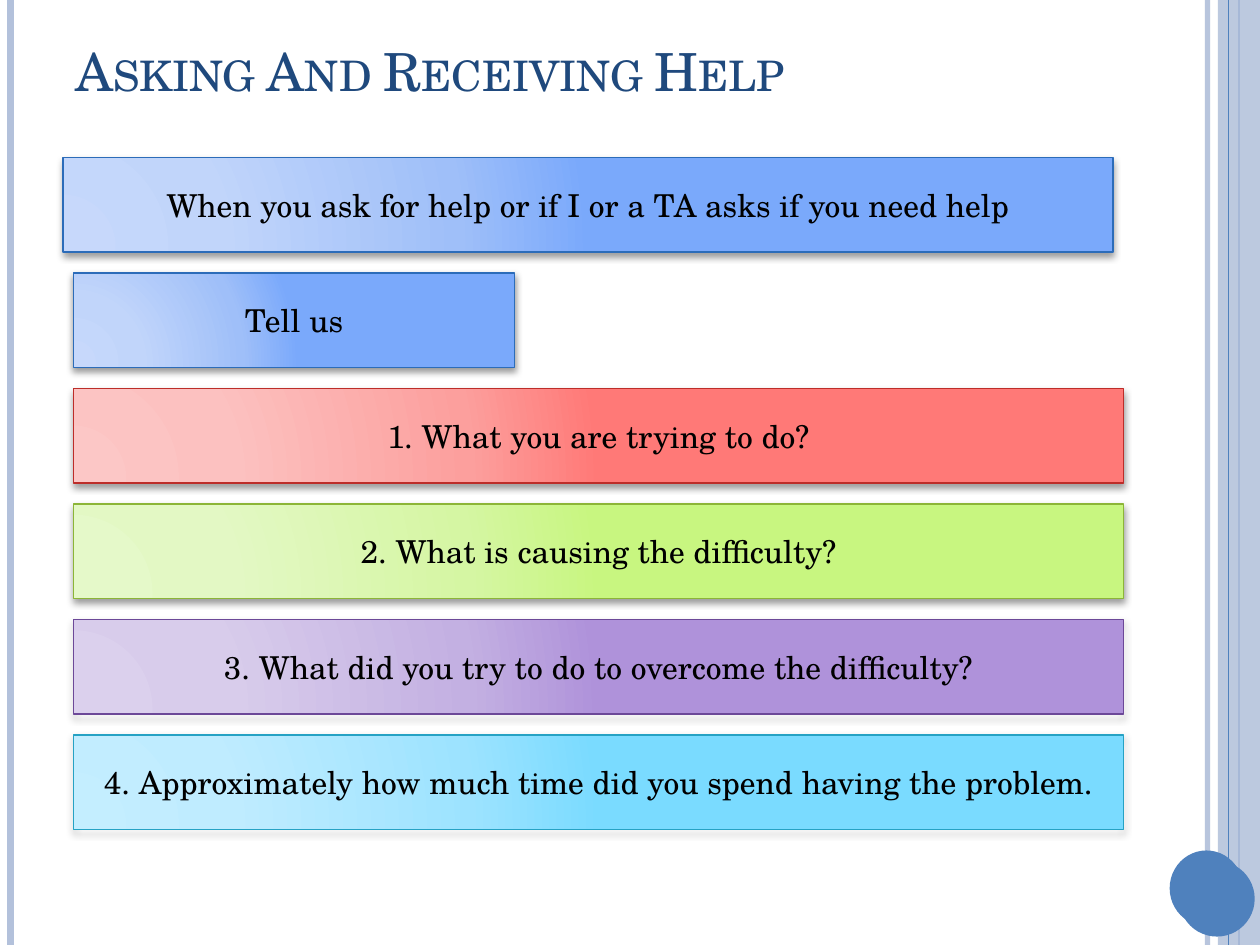
from lxml import etree
from pptx import Presentation
from pptx.dml.color import RGBColor
from pptx.enum.shapes import MSO_CONNECTOR, MSO_SHAPE
from pptx.enum.text import MSO_ANCHOR, PP_ALIGN
from pptx.oxml import parse_xml
from pptx.oxml.ns import nsdecls, qn
from pptx.util import Inches, Pt

RECT, OVAL = MSO_SHAPE.RECTANGLE, MSO_SHAPE.OVAL
STRAIGHT = MSO_CONNECTOR.STRAIGHT
MIDDLE, CENTER = MSO_ANCHOR.MIDDLE, PP_ALIGN.CENTER
FONT = "TeX Gyre Schola"
NAVY = RGBColor(0x1F, 0x49, 0x7D)
BLUE = RGBColor(0x4F, 0x81, 0xBD)
PALE = RGBColor(0xB3, 0xC1, 0xDB)
BLACK = RGBColor(0, 0, 0)

# Outline colour, then the gradient colours at STOPS
STOPS = (0, 30, 75, 100)
BLUES = [RGBColor.from_string(c) for c in ("2C6CB9", "C7D8FB", "C1D5FA", "9FBFF9", "7AA9FB")]
REDS = [RGBColor.from_string(c) for c in ("BD2D29", "FCC7C6", "FCC1C0", "FC9F9D", "FF7977")]
GREENS = [RGBColor.from_string(c) for c in ("8CB537", "E5F9C9", "E3F8C4", "D5F6A3", "C8F680")]
PURPLES = [RGBColor.from_string(c) for c in ("6C4898", "DBD0ED", "D8CCEB", "C3B0E2", "AF92DA")]
CYANS = [RGBColor.from_string(c) for c in ("26A2C4", "C4EEFF", "BFECFF", "9DE3FF", "7ADBFF")]

prs = Presentation()
prs.slide_width, prs.slide_height = Inches(10), Inches(7.5)
s = prs.slides.add_slide(prs.slide_layouts[6])
U = prs.slide_width // 120  # grid unit: 120 columns by 90 rows


def set_alpha(shape, percent):
    color = next(shape._element.spPr.iter(qn("a:srgbClr")))
    etree.SubElement(color, qn("a:alpha"), val=str(percent * 1000))


def add_plain(kind, left, top, width, height, color):
    """Add an unoutlined shape, measured in grid units."""
    sp = s.shapes.add_shape(kind, *(int(v * U) for v in (left, top, width, height)))
    sp.shadow.inherit = False
    sp.fill.solid()
    sp.fill.fore_color.rgb = color
    sp.line.fill.background()
    return sp


# Side rules, with the right-hand band between them
for column, color, width, alpha in [
    (115, PALE, 3, 93), (1, PALE, 4.5, 100), (118, BLUE, 1.5, 100), (117, BLUE, 0.75, 100),
]:
    if column == 117:
        set_alpha(add_plain(RECT, 116, 0, 4, 90, PALE), 87)
    rule = s.shapes.add_connector(STRAIGHT, column * U, 0, column * U, prs.slide_height)
    rule.line.color.rgb = color
    rule.line.width = Pt(width)
    set_alpha(rule, alpha)
    etree.SubElement(rule._element.spPr, qn("a:effectLst"))

add_plain(OVAL, 111.4, 81, 7, 7.2, BLUE)
add_plain(OVAL, 112.3, 82, 7.2, 7.2, BLUE)

title = s.shapes.add_textbox(6 * U, U, 108 * U, int(11.4 * U))
tf = title.text_frame
tf.word_wrap = True
tf.vertical_anchor = MIDDLE
tf.text = "Asking And Receiving Help"
r = tf.paragraphs[0].runs[0]
r.font.name, r.font.size, r.font.color.rgb = FONT, Pt(30), NAVY
r.font._element.set("cap", "small")

bars = [
    (6, 100, BLUES, "When you ask for help or if I or a TA asks if you need help"),
    (7, 42, BLUES, "Tell us"),
    (7, 100, REDS, "1. What you are trying to do?"),
    (7, 100, GREENS, "2. What is causing the difficulty?"),
    (7, 100, PURPLES, "3. What did you try to do to overcome the difficulty?"),
    (7, 100, CYANS, "4. Approximately how much time did you spend having the problem."),
]
for row, (left, width, (outline, *shades), text) in enumerate(bars):
    sp = add_plain(RECT, left, 15 + 11 * row, width, 9, shades[-1])
    stops = "".join(
        f'<a:gs pos="{pos * 1000}"><a:srgbClr val="{shade}"/></a:gs>'
        for pos, shade in zip(STOPS, shades)
    )
    spPr = sp._element.spPr
    spPr.replace(spPr.find(qn("a:solidFill")), parse_xml(
        f'<a:gradFill {nsdecls("a")} rotWithShape="1"><a:gsLst>{stops}</a:gsLst>'
        '<a:path path="circle"><a:fillToRect l="5000" t="100000" r="120000" b="10000"/>'
        '</a:path></a:gradFill>'))
    spPr.find(qn("a:effectLst")).append(parse_xml(
        f'<a:outerShdw {nsdecls("a")} blurRad="{Pt(4)}" dist="{Pt(2)}" dir="5400000" '
        'rotWithShape="0"><a:srgbClr val="000000"><a:alpha val="40000"/></a:srgbClr>'
        '</a:outerShdw>'))
    sp.line.color.rgb = outline
    sp.line.width = Pt(1)
    tf = sp.text_frame
    tf.word_wrap = True
    tf.vertical_anchor = MIDDLE
    tf.text = text
    p = tf.paragraphs[0]
    p.alignment = CENTER
    r = p.runs[0]
    r.font.name, r.font.size, r.font.color.rgb = FONT, Pt(18), BLACK

prs.save("out.pptx")
